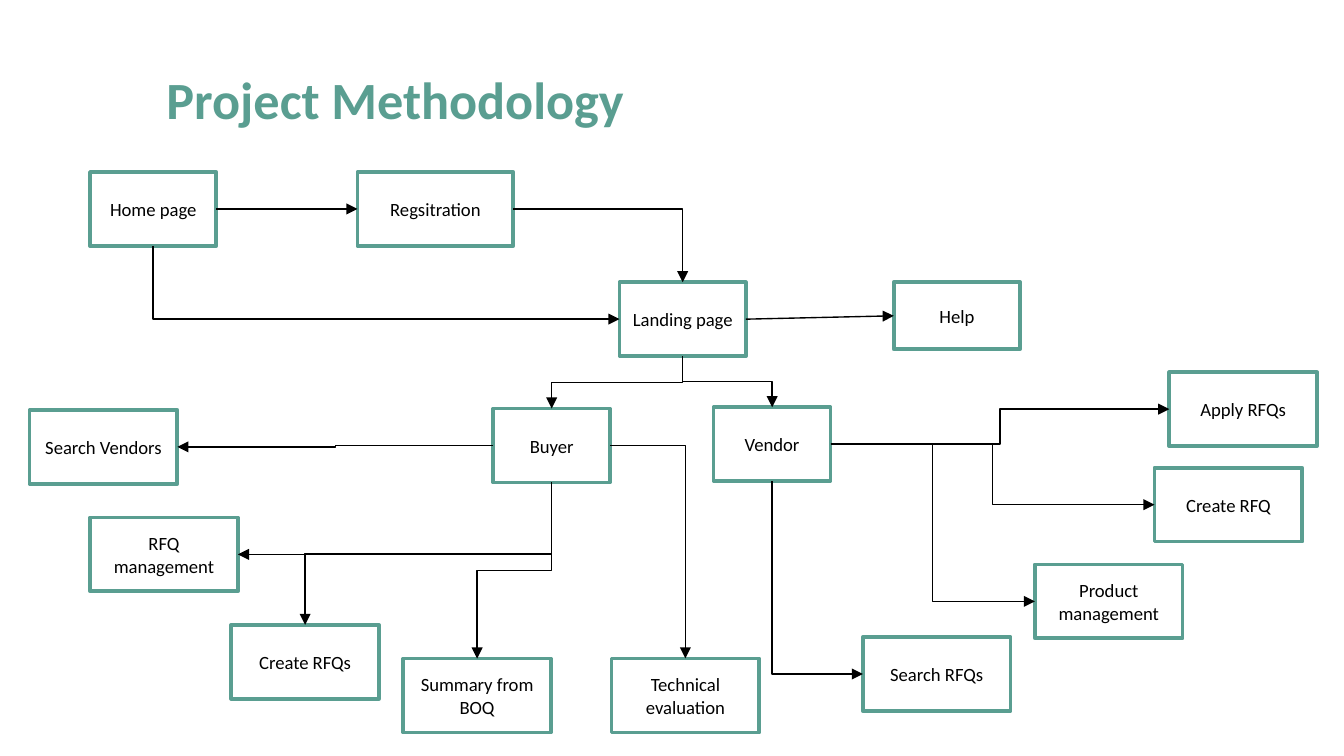
from typing import NamedTuple

from lxml import etree
from pptx import Presentation
from pptx.dml.color import RGBColor
from pptx.enum.shapes import MSO_CONNECTOR, MSO_SHAPE
from pptx.enum.text import MSO_ANCHOR, PP_ALIGN
from pptx.oxml.ns import qn
from pptx.util import Inches, Pt

RECT = MSO_SHAPE.RECTANGLE
STRAIGHT, ELBOW = MSO_CONNECTOR.STRAIGHT, MSO_CONNECTOR.ELBOW
CENTER, MIDDLE = PP_ALIGN.CENTER, MSO_ANCHOR.MIDDLE
TOP, LEFT, BOTTOM, RIGHT = range(4)  # connection sites of a rectangle

COLORS = {"teal": "5A9E91", "white": "FFFFFF", "black": "000000"}
FONT = "Calibri"
SLIDE_W = 10
SLIDE_H = SLIDE_W * 9 / 16
PAGE_W, ROLE_W, TASK_W, BOX_H = 0.94, 0.87, 1.1, 0.55


class Box(NamedTuple):
    key: str
    text: str
    x: float
    y: float
    w: float
    h: float = BOX_H


class Link(NamedTuple):
    start: str
    start_site: int
    end: str
    end_site: int
    kind: int = ELBOW


BOXES = [
    # Pages
    Box("home", "Home page", 0.67, 1.28, PAGE_W),
    Box("registration", "Regsitration", 2.66, 1.28, 1.16),
    Box("landing", "Landing page", 4.61, 2.1, PAGE_W),
    Box("help", "Help", 6.65, 2.1, PAGE_W, 0.5),
    # Roles
    Box("buyer", "Buyer", 3.67, 3.04, ROLE_W),
    Box("vendor", "Vendor", 5.31, 3.03, ROLE_W),
    # Buyer tasks
    Box("search_vendors", "Search Vendors", 0.22, 3.05, TASK_W),
    Box("rfq_management", "RFQ management", 0.67, 3.85, TASK_W),
    Box("create_rfqs", "Create RFQs", 1.72, 4.65, TASK_W),
    Box("summary", "Summary from BOQ", 3, 4.9, TASK_W),
    Box("evaluation", "Technical evaluation", 4.55, 4.9, TASK_W),
    # Vendor tasks
    Box("apply", "Apply RFQs", 8.7, 2.77, TASK_W),
    Box("create_rfq", "Create RFQ", 8.59, 3.48, TASK_W),
    Box("products", "Product management", 7.7, 4.2, TASK_W),
    Box("search_rfqs", "Search RFQs", 6.42, 4.74, TASK_W),
]

LINKS = [
    Link("home", RIGHT, "registration", LEFT, STRAIGHT),
    Link("registration", RIGHT, "landing", TOP),
    Link("home", BOTTOM, "landing", LEFT),
    Link("landing", RIGHT, "help", LEFT, STRAIGHT),
    Link("landing", BOTTOM, "buyer", TOP),
    Link("landing", BOTTOM, "vendor", TOP),
    Link("buyer", LEFT, "search_vendors", RIGHT),
    Link("buyer", BOTTOM, "rfq_management", RIGHT),
    Link("buyer", BOTTOM, "create_rfqs", TOP),
    Link("buyer", BOTTOM, "summary", TOP),
    Link("buyer", RIGHT, "evaluation", TOP),
    Link("vendor", BOTTOM, "search_rfqs", LEFT),
    Link("vendor", RIGHT, "products", LEFT),
    Link("vendor", RIGHT, "create_rfq", LEFT),
    Link("vendor", RIGHT, "apply", LEFT),
]


def color(name: str) -> RGBColor:
    return RGBColor.from_string(COLORS[name])


def set_font(p, size: float, name: str, bold: bool = False) -> None:
    f = p.font
    f.name, f.size, f.bold = FONT, Pt(size), bold
    f.color.rgb = color(name)


def add_title(slide, text: str) -> None:
    tf = slide.shapes.add_textbox(
        Inches(1.14), Inches(0.45), Inches(8), Inches(0.57)).text_frame
    tf.word_wrap = True
    p = tf.paragraphs[0]
    p.text = text
    set_font(p, 28, "teal", bold=True)


def add_box(slide, box: Box):
    s = slide.shapes.add_shape(
        RECT, Inches(box.x), Inches(box.y), Inches(box.w), Inches(box.h))
    s.shadow.inherit = False
    s.fill.solid()
    s.fill.fore_color.rgb = color("white")
    s.line.color.rgb = color("teal")
    s.line.width = Pt(2)
    tf = s.text_frame
    tf.word_wrap = True
    tf.vertical_anchor = MIDDLE
    p = tf.paragraphs[0]
    p.text = box.text
    p.alignment = CENTER
    set_font(p, 10, "black")
    return s


def turn_downward(c) -> None:
    """Rotate an elbow so that it leaves its start box downward."""
    dx, dy = c.end_x - c.begin_x, c.end_y - c.begin_y
    mid_x, mid_y = c.begin_x + dx // 2, c.begin_y + dy // 2
    c.width, c.height = abs(dy), abs(dx)
    c.left, c.top = mid_x - c.width // 2, mid_y - c.height // 2
    xfrm = c._element.spPr.find(qn("a:xfrm"))
    xfrm.set("rot", str((270 if dx > 0 else 90) * 60000))
    xfrm.set("flipH", "1" if dx > 0 else "0")
    xfrm.set("flipV", "0")


def add_link(slide, link: Link, shapes: dict) -> None:
    c = slide.shapes.add_connector(link.kind, 0, 0, 0, 0)
    c.begin_connect(shapes[link.start], link.start_site)
    c.end_connect(shapes[link.end], link.end_site)
    c.line.color.rgb = color("black")
    c.line.width = Pt(0.75)
    sp_pr = c._element.spPr
    if link.kind == ELBOW:
        # Sites on different axes need one bend, otherwise two
        if link.start_site % 2 != link.end_site % 2:
            sp_pr.find(qn("a:prstGeom")).set("prst", "bentConnector2")
        if link.start_site == BOTTOM:
            turn_downward(c)
    etree.SubElement(sp_pr.find(qn("a:ln")), qn("a:tailEnd"), type="triangle")
    etree.SubElement(sp_pr, qn("a:effectLst"))


def main() -> None:
    prs = Presentation()
    prs.slide_width, prs.slide_height = Inches(SLIDE_W), Inches(SLIDE_H)
    slide = prs.slides.add_slide(prs.slide_layouts[6])
    add_title(slide, "Project Methodology")
    shapes = {box.key: add_box(slide, box) for box in BOXES}
    for link in LINKS:
        add_link(slide, link, shapes)
    prs.save("out.pptx")


if __name__ == "__main__":
    main()
